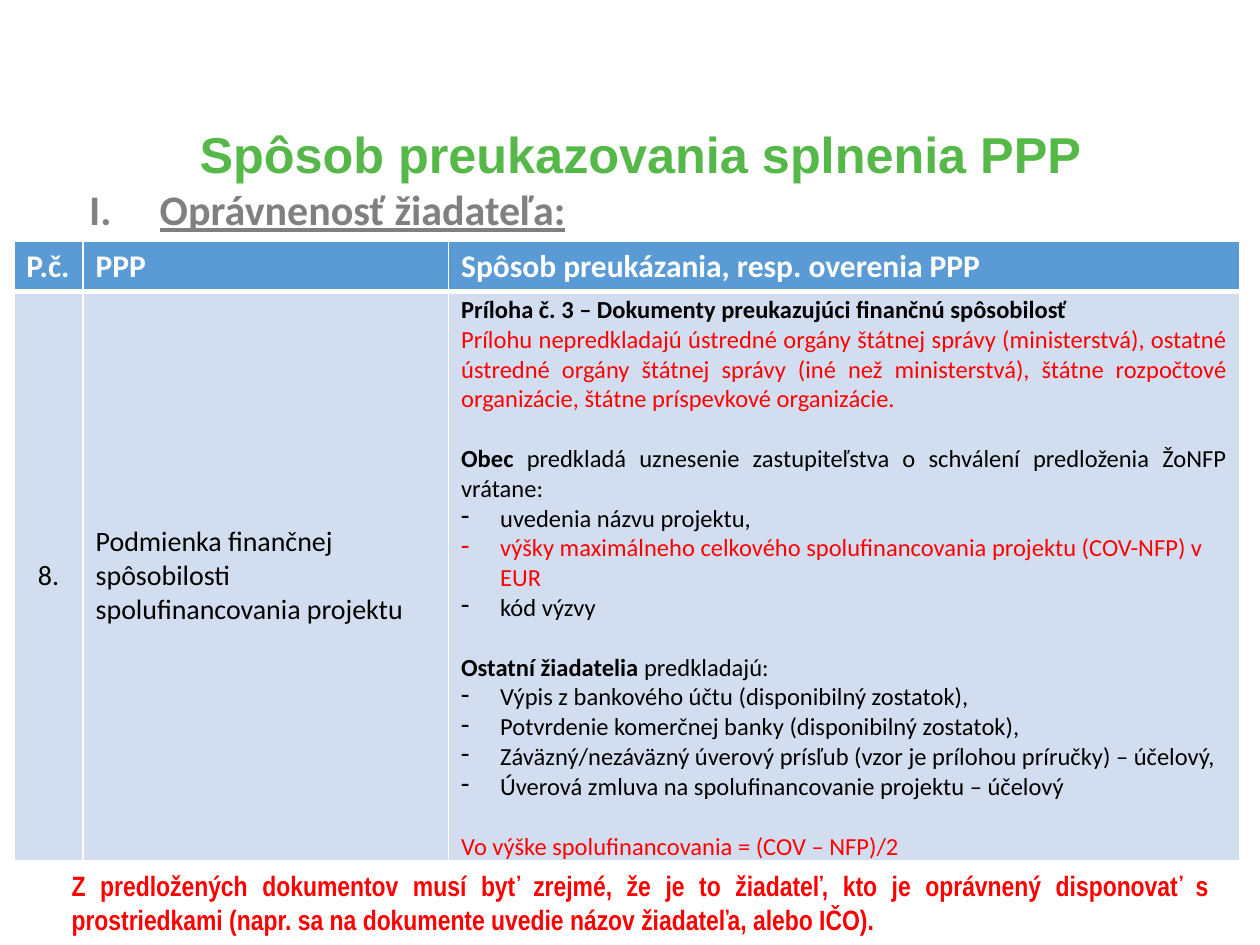
from lxml import etree
from pptx import Presentation
from pptx import util as u
from pptx.dml.color import RGBColor
from pptx.enum import text
from pptx.oxml import ns

GREEN = RGBColor(0x55, 0xB8, 0x48)
GREY = RGBColor(0x80, 0x80, 0x80)
BLUE = RGBColor(0x5B, 0x9B, 0xD5)
PALE_BLUE = RGBColor(0xD2, 0xDE, 0xEF)
RED = RGBColor(0xFF, 0x00, 0x00)
BLACK = RGBColor(0x00, 0x00, 0x00)
WHITE = RGBColor(0xFF, 0xFF, 0xFF)

WIDTH, HEIGHT = u.Inches(10), u.Inches(7.5)
BLANK_LINE = u.Pt(17)
LEFT, CENTER, JUSTIFY = text.PP_ALIGN.LEFT, text.PP_ALIGN.CENTER, text.PP_ALIGN.JUSTIFY

HEADINGS = ["P.č.", "PPP", "Spôsob preukázania, resp. overenia PPP"]
CONDITION = "Podmienka finančnej spôsobilosti spolufinancovania projektu"

# Each entry: bold lead, plain rest, colour, alignment, bulleted, starts a group
REQUIREMENTS = [
    ("Príloha č. 3 – Dokumenty preukazujúci finančnú spôsobilosť", "", BLACK, LEFT, False, False),
    ("", "Prílohu nepredkladajú ústredné orgány štátnej správy (ministerstvá), ostatné ústredné "
     "orgány štátnej správy (iné než ministerstvá), štátne rozpočtové organizácie, štátne "
     "príspevkové organizácie.", RED, JUSTIFY, False, False),
    ("Obec", " predkladá uznesenie zastupiteľstva o schválení predloženia ŽoNFP vrátane:",
     BLACK, JUSTIFY, False, True),
    ("", "uvedenia názvu projektu,", BLACK, LEFT, True, False),
    ("", "výšky maximálneho celkového spolufinancovania projektu (COV-NFP) v EUR",
     RED, LEFT, True, False),
    ("", "kód výzvy", BLACK, LEFT, True, False),
    ("Ostatní žiadatelia ", "predkladajú:", BLACK, LEFT, False, True),
    ("", "Výpis z bankového účtu (disponibilný zostatok),", BLACK, LEFT, True, False),
    ("", "Potvrdenie komerčnej banky (disponibilný zostatok),", BLACK, LEFT, True, False),
    ("", "Záväzný/nezáväzný úverový prísľub (vzor je prílohou príručky) – účelový,",
     BLACK, LEFT, True, False),
    ("", "Úverová zmluva na spolufinancovanie projektu – účelový", BLACK, LEFT, True, False),
    ("", "Vo výške spolufinancovania = (COV – NFP)/2", RED, LEFT, False, True),
]


def share(left, top, width, height):
    """Turn shares of the slide into a box of lengths."""
    return (round(left * WIDTH), round(top * HEIGHT),
            round(width * WIDTH), round(height * HEIGHT))


def style(paragraph, name, size, color, bold=None, align=LEFT):
    paragraph.alignment = align
    font = paragraph.font
    font.name, font.size, font.bold = name, u.Pt(size), bold
    font.color.rgb = color


def add_bullet(paragraph, indent, tag, **attributes):
    properties = paragraph._p.get_or_add_pPr()
    properties.set("marL", str(u.Inches(indent)))
    properties.set("indent", str(-u.Inches(indent)))
    etree.SubElement(properties, ns.qn(f"a:{tag}"), **attributes)


def add_border(cell, side, points):
    line = etree.SubElement(cell._tc.get_or_add_tcPr(), ns.qn(f"a:{side}"), w=str(u.Pt(points)))
    fill = etree.SubElement(line, ns.qn("a:solidFill"))
    etree.SubElement(fill, ns.qn("a:srgbClr"), val=str(WHITE))


def format_cell(cell, color, bottom):
    for side, points in (("lnL", 1), ("lnR", 1), ("lnT", 1), ("lnB", bottom)):
        add_border(cell, side, points)
    cell.fill.solid()
    cell.fill.fore_color.rgb = color


def place_title(slide, box):
    title = slide.shapes.title
    title.left, title.top, title.width, title.height = box
    frame = title.text_frame
    frame.text = "Spôsob preukazovania splnenia PPP"
    frame.vertical_anchor = text.MSO_ANCHOR.MIDDLE
    paragraph = frame.paragraphs[0]
    paragraph.line_spacing = 0.9
    style(paragraph, "Arial", 28.8, GREEN, True, CENTER)


def add_text(slide, box, words):
    frame = slide.shapes.add_textbox(*box).text_frame
    frame.word_wrap = True
    frame.text = words
    return frame.paragraphs[0]


def add_section_heading(slide, box):
    paragraph = add_text(slide, box, "Oprávnenosť žiadateľa:")
    add_bullet(paragraph, 0.56, "buAutoNum", type="romanUcPeriod")
    style(paragraph, "Calibri", 24, GREY, True, JUSTIFY)
    paragraph.font.underline = True


def fill_requirements(cell):
    frame = cell.text_frame
    for index, (lead, rest, color, align, bulleted, new_group) in enumerate(REQUIREMENTS):
        paragraph = frame.add_paragraph() if index else frame.paragraphs[0]
        if new_group:
            paragraph.space_before = BLANK_LINE
        if bulleted:
            add_bullet(paragraph, 0.31, "buChar", char="-")
        for words, bold in ((lead, True), (rest, False)):
            if words:
                run = paragraph.add_run()
                run.text, run.font.bold = words, bold
        style(paragraph, "Calibri", 14, color, align=align)


def add_conditions_table(slide, box):
    table = slide.shapes.add_table(2, 3, *box).table
    for column, width in zip(table.columns, (0.55, 2.9, 6.28)):
        column.width = u.Inches(width)
    for row, height in zip(table.rows, (0.39, 4.52)):
        row.height = u.Inches(height)

    # Header row
    for column, heading in enumerate(HEADINGS):
        cell = table.cell(0, column)
        cell.text = heading
        style(cell.text_frame.paragraphs[0], "Calibri", 18, WHITE, True)
        format_cell(cell, BLUE, bottom=3)

    # Condition row
    number, condition, requirements = table.rows[1].cells
    for cell, words, align in ((number, "8.", CENTER), (condition, CONDITION, LEFT)):
        cell.text = words
        style(cell.text_frame.paragraphs[0], "Calibri", 16, BLACK, align=align)
    fill_requirements(requirements)
    requirements.margin_top, requirements.margin_bottom = u.Inches(0.03), 0
    for cell in (number, condition, requirements):
        cell.vertical_anchor = text.MSO_ANCHOR.MIDDLE
        format_cell(cell, PALE_BLUE, bottom=1)


def add_closing_note(slide, box):
    paragraph = add_text(
        slide, box,
        "Z predložených dokumentov musí byť zrejmé, že je to žiadateľ, kto je oprávnený "
        "disponovať s prostriedkami (napr. sa na dokumente uvedie názov žiadateľa, alebo IČO).")
    style(paragraph, "Arial Narrow", 16, RED, True, JUSTIFY)


def main():
    presentation = Presentation()
    presentation.slide_width, presentation.slide_height = WIDTH, HEIGHT
    slide = presentation.slides.add_slide(presentation.slide_layouts[5])
    place_title(slide, share(0.061, 0.13, 0.895, 0.073))
    add_section_heading(slide, share(0.061, 0.188, 0.853, 0.067))
    add_conditions_table(slide, share(0.011, 0.255, 0.973, 0.655))
    add_closing_note(slide, share(0.047, 0.913, 0.923, 0.085))
    presentation.save("out.pptx")


if __name__ == "__main__":
    main()
